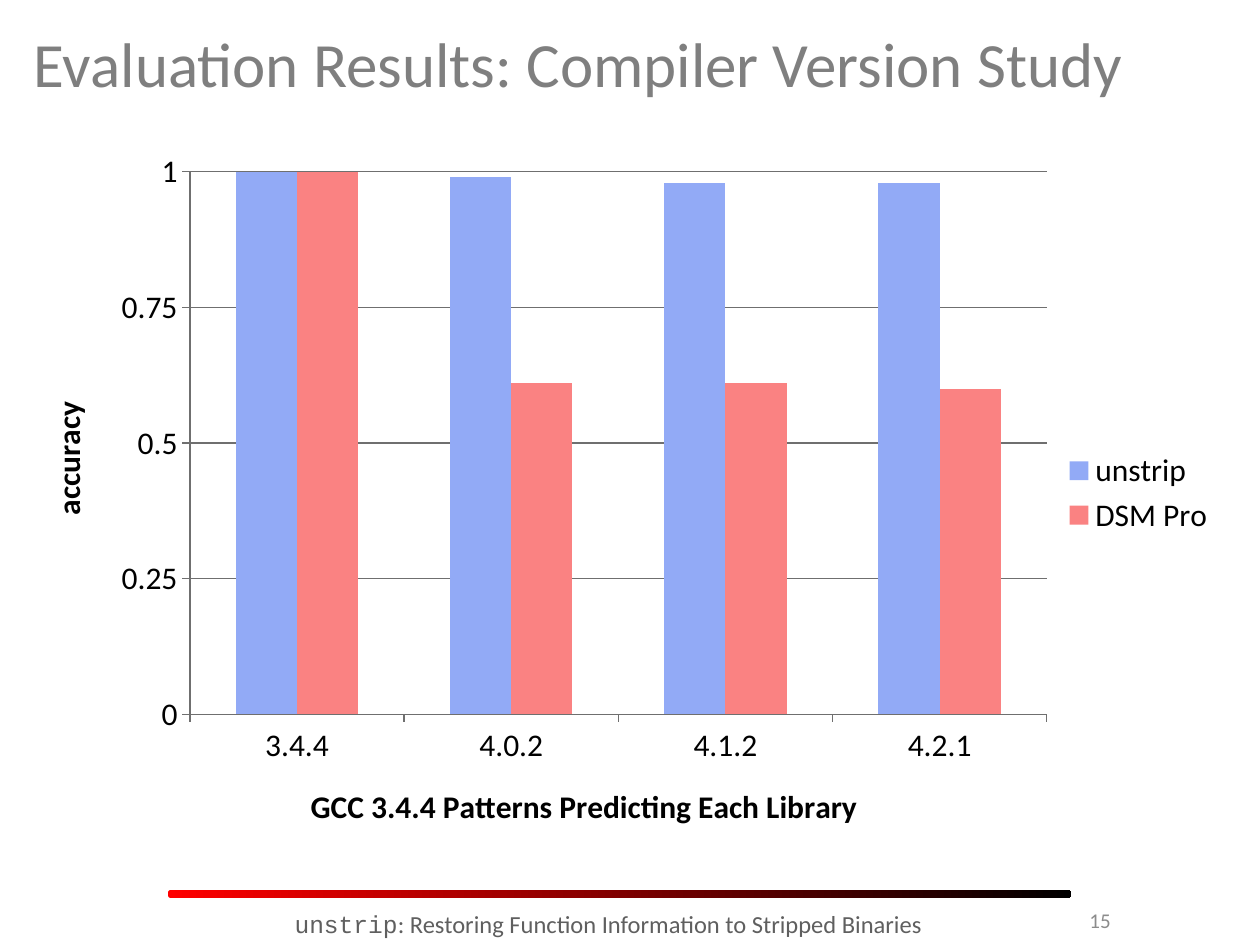
from lxml import etree
from pptx import Presentation, util as u
from pptx.chart.data import CategoryChartData
from pptx.dml.color import RGBColor
from pptx.enum import chart as charts, shapes, text
from pptx.oxml.ns import qn

PX = 914400 / 126
COLORS = {
    "title": "7F7F7F", "footer": "5F5F5F", "number": "8C8C8C",
    "text": "000000", "grid": "6F6F6F",
    "unstrip": "92AAF6", "rival": "FA8282",
    "rule_start": "FF0000", "rule_end": "000000",
}


def color(name):
    return RGBColor.from_string(COLORS[name])


class SlideBuilder:
    font = "Calibri"

    def __init__(self, slide):
        self.slide = slide

    def box(self, *lengths):
        return [u.Emu(round(length * PX)) for length in lengths]

    def style(self, font, size, color_name, bold=False):
        font.name = self.font
        font.size = u.Pt(size)
        font.bold = bold
        font.color.rgb = color(color_name)

    def title(self, words, bounds, size):
        shape = self.slide.shapes.title
        shape.left, shape.top, shape.width, shape.height = self.box(*bounds)
        frame = shape.text_frame
        frame.text = words
        frame.vertical_anchor = text.MSO_ANCHOR.MIDDLE
        paragraph = frame.paragraphs[0]
        paragraph.alignment = text.PP_ALIGN.LEFT
        self.style(paragraph.font, size, "title")

    def label(self, runs, bounds, size, color_name, alignment, anchor):
        shape = self.slide.shapes.add_textbox(*self.box(*bounds))
        frame = shape.text_frame
        frame.word_wrap = True
        frame.vertical_anchor = anchor
        paragraph = frame.paragraphs[0]
        paragraph.alignment = alignment
        self.style(paragraph.font, size, color_name)
        for words, font_name in runs:
            run = paragraph.add_run()
            run.text = words
            run.font.name = font_name

    def rule(self, bounds):
        shape = self.slide.shapes.add_shape(
            shapes.MSO_SHAPE.ROUNDED_RECTANGLE, *self.box(*bounds))
        shape.adjustments[0] = 0.33
        shape.shadow.inherit = False
        shape.line.fill.background()
        shape.fill.gradient()
        shape.fill.gradient_angle = 0
        for stop, name in zip(shape.fill.gradient_stops, ("rule_start", "rule_end")):
            stop.color.rgb = color(name)

    def axis(self, axis, words, size):
        axis.axis_title.text_frame.text = words
        paragraph = axis.axis_title.text_frame.paragraphs[0]
        self.style(paragraph.font, size, "text", bold=True)
        axis.major_tick_mark = charts.XL_TICK_MARK.OUTSIDE
        axis.minor_tick_mark = charts.XL_TICK_MARK.NONE
        axis.format.line.color.rgb = color("grid")

    def column_chart(self, categories, series, titles, bounds, layout, size):
        data = CategoryChartData()
        data.categories = categories
        for name, values, _ in series:
            data.add_series(name, values)
        chart = self.slide.shapes.add_chart(
            charts.XL_CHART_TYPE.COLUMN_CLUSTERED, *self.box(*bounds), data).chart
        self.style(chart.font, size, "text")
        chart.has_title = False
        chart.has_legend = True
        chart.legend.position = charts.XL_LEGEND_POSITION.RIGHT
        chart.legend.include_in_layout = False
        for axis, words in zip((chart.category_axis, chart.value_axis), titles):
            self.axis(axis, words, size)
        axis = chart.value_axis
        axis.minimum_scale, axis.maximum_scale, axis.major_unit = 0, 1, 0.25
        axis.has_major_gridlines = True
        axis.major_gridlines.format.line.color.rgb = color("grid")
        plot = chart.plots[0]
        plot.vary_by_categories = False
        plot.gap_width = 150
        plot.overlap = 0
        for column, (_, _, color_name) in zip(plot.series, series):
            column.format.fill.solid()
            column.format.fill.fore_color.rgb = color(color_name)
        self.place_plot(chart, layout)

    def place_plot(self, chart, layout):
        area = chart.element.find(".//" + qn("c:plotArea"))
        for old in area.findall(qn("c:layout")):
            area.remove(old)
        outer = etree.Element(qn("c:layout"))
        manual = etree.SubElement(outer, qn("c:manualLayout"))
        settings = [("layoutTarget", "inner"), ("xMode", "edge"), ("yMode", "edge")]
        for tag, value in settings + list(zip("xywh", layout)):
            etree.SubElement(manual, qn("c:" + tag)).set("val", str(value))
        area.insert(0, outer)


def main():
    presentation = Presentation()
    presentation.slide_width, presentation.slide_height = u.Inches(10), u.Inches(7.5)
    builder = SlideBuilder(presentation.slides.add_slide(presentation.slide_layouts[5]))
    builder.rule((168, 890, 903, 8))
    builder.title("Evaluation Results: Compiler Version Study", (21, 10, 1218, 105), 36)
    builder.column_chart(
        ["3.4.4", "4.0.2", "4.1.2", "4.2.1"],
        [("unstrip", (1, 0.99, 0.98, 0.98), "unstrip"),
         ("DSM Pro", (1, 0.61, 0.61, 0.6), "rival")],
        ("GCC 3.4.4 Patterns Predicting Each Library", "accuracy"),
        (21, 136, 1207, 714), (0.14, 0.05, 0.71, 0.76), 18)
    builder.label([("15", "Calibri")], (955, 895, 168, 50), 12, "number",
                  text.PP_ALIGN.RIGHT, text.MSO_ANCHOR.MIDDLE)
    builder.label(
        [("unstrip", "Courier New"),
         (": Restoring Function Information to Stripped Binaries", "Calibri")],
        (262, 903, 693, 42), 14, "footer", text.PP_ALIGN.CENTER, text.MSO_ANCHOR.TOP)
    presentation.save("out.pptx")


if __name__ == "__main__":
    main()
